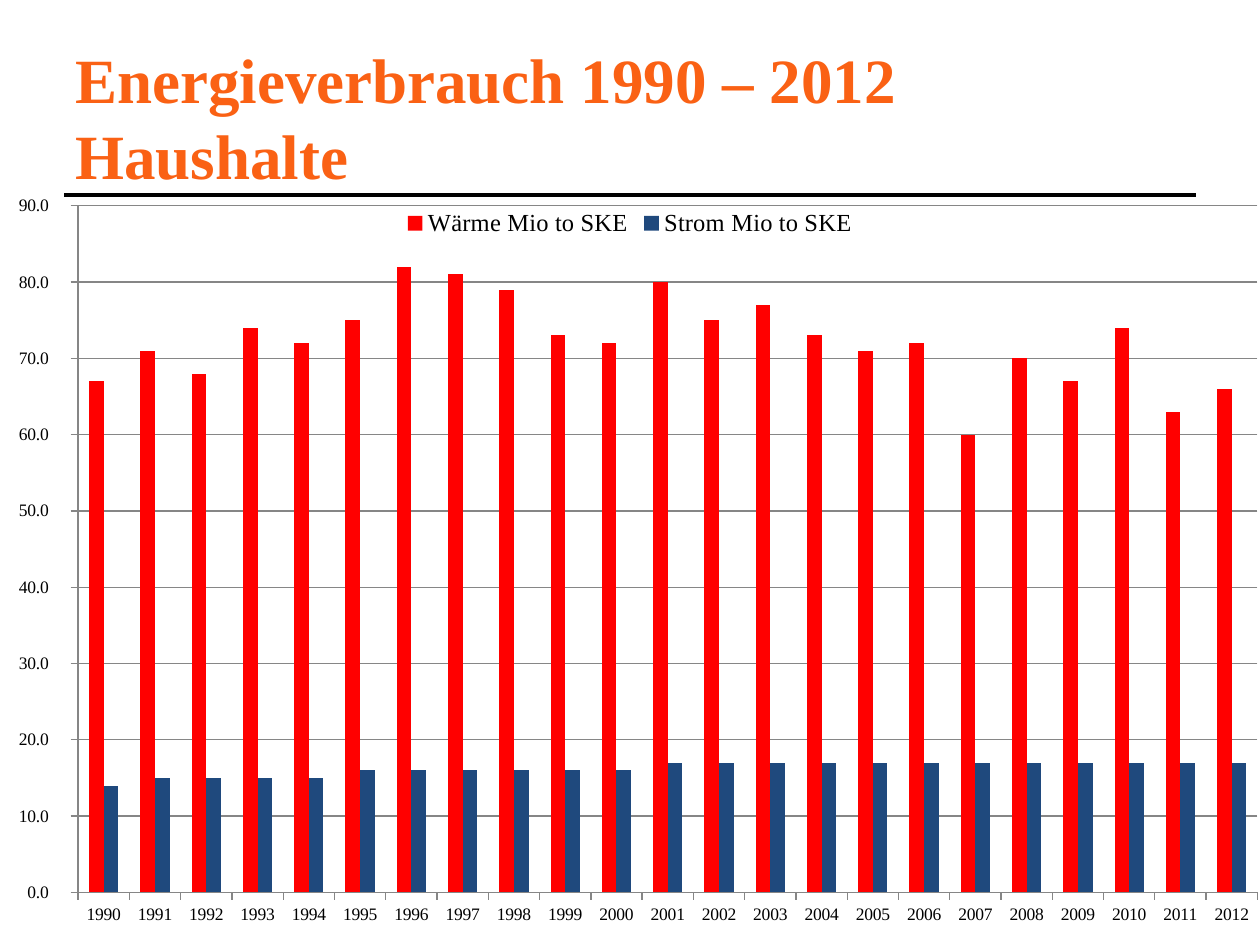
from lxml.etree import SubElement
from pptx import Presentation
from pptx.chart.data import CategoryChartData
from pptx.dml.color import RGBColor
from pptx.enum.chart import XL_CHART_TYPE as ChartType, XL_LEGEND_POSITION as LegendPosition
from pptx.enum.chart import XL_TICK_MARK as TickMark
from pptx.enum.shapes import MSO_CONNECTOR as Connector
from pptx.enum.text import MSO_ANCHOR as Anchor
from pptx.oxml import parse_xml
from pptx.oxml.ns import nsdecls, qn
from pptx.util import Pt

FONT = "Times New Roman"
YEARS = [str(year) for year in range(1990, 2013)]
HEAT = [67, 71, 68, 74, 72, 75, 82, 81, 79, 73, 72, 80,
        75, 77, 73, 71, 72, 60, 70, 67, 74, 63, 66]
POWER = [14] + [15] * 4 + [16] * 6 + [17] * 12
SERIES = [("Wärme Mio to SKE", HEAT, "FF0000"), ("Strom Mio to SKE", POWER, "1F497D")]
PLOT_AREA = {"x": 0.062, "y": 0.014, "w": 0.936, "h": 0.916}


def color(value):
    return RGBColor.from_string(value)


def style_font(font, size, value, bold=False):
    font.name = FONT
    font.size = Pt(size)
    font.bold = bold
    font.color.rgb = color(value)


def add_title(page, left, top, width, height):
    box = page.shapes.add_textbox(Pt(left), Pt(top), Pt(width), Pt(height))
    frame = box.text_frame
    frame.word_wrap = True
    frame.vertical_anchor = Anchor.MIDDLE
    para = frame.paragraphs[0]
    para.text = "Energieverbrauch 1990 – 2012 Haushalte"
    style_font(para.font, 36, "FA6114", bold=True)


def add_rule(page, left, top, width):
    rule = page.shapes.add_connector(
        Connector.STRAIGHT, Pt(left), Pt(top), Pt(left + width), Pt(top))
    rule.line.color.rgb = color("000000")
    rule.line.width = Pt(2.25)
    SubElement(rule._element.spPr, qn("a:effectLst"))


def place_plot(chart):
    modes = '<c:layoutTarget val="inner"/><c:xMode val="edge"/><c:yMode val="edge"/>'
    sizes = "".join(f'<c:{key} val="{share}"/>' for key, share in PLOT_AREA.items())
    layout = parse_xml(
        f'<c:layout {nsdecls("c")}><c:manualLayout>{modes}{sizes}</c:manualLayout></c:layout>')
    plot_area = chart._chartSpace.chart.plotArea
    for old in plot_area.findall(qn("c:layout")):
        plot_area.remove(old)
    plot_area.insert(0, layout)


def style_axis(axis):
    axis.major_tick_mark = TickMark.OUTSIDE
    axis.minor_tick_mark = TickMark.NONE
    axis.format.line.color.rgb = color("868686")
    axis.format.line.width = Pt(0.75)
    style_font(axis.tick_labels.font, 10, "000000")


def add_consumption_chart(page, left, top, width, height):
    data = CategoryChartData()
    data.categories = YEARS
    for name, values, _ in SERIES:
        data.add_series(name, values)
    chart = page.shapes.add_chart(
        ChartType.COLUMN_CLUSTERED, Pt(left), Pt(top), Pt(width), Pt(height), data).chart
    chart.has_title = False
    style_font(chart.font, 10, "000000")
    place_plot(chart)

    plot = chart.plots[0]
    plot.gap_width = 150
    plot.overlap = 0
    plot.vary_by_categories = False
    for series, (_, _, value) in zip(plot.series, SERIES):
        series.format.fill.solid()
        series.format.fill.fore_color.rgb = color(value)

    style_axis(chart.category_axis)
    axis = chart.value_axis
    style_axis(axis)
    axis.minimum_scale, axis.maximum_scale, axis.major_unit = 0, 90, 10
    axis.tick_labels.number_format = r"0.0\ \ \ \ "
    axis.tick_labels.number_format_is_linked = False
    axis.has_major_gridlines = True
    axis.major_gridlines.format.line.color.rgb = color("868686")
    axis.major_gridlines.format.line.width = Pt(0.75)

    chart.has_legend = True
    chart.legend.position = LegendPosition.TOP
    chart.legend.include_in_layout = False
    style_font(chart.legend.font, 14, "000000")


def main():
    deck = Presentation()
    deck.slide_width, deck.slide_height = Pt(720), Pt(540)
    page = deck.slides.add_slide(deck.slide_layouts[6])
    add_rule(page, 36.7, 111.6, 646.6)
    add_title(page, 36, 21.6, 494, 90)
    add_consumption_chart(page, 0, 111.6, 720, 428.4)
    deck.save("out.pptx")


if __name__ == "__main__":
    main()
